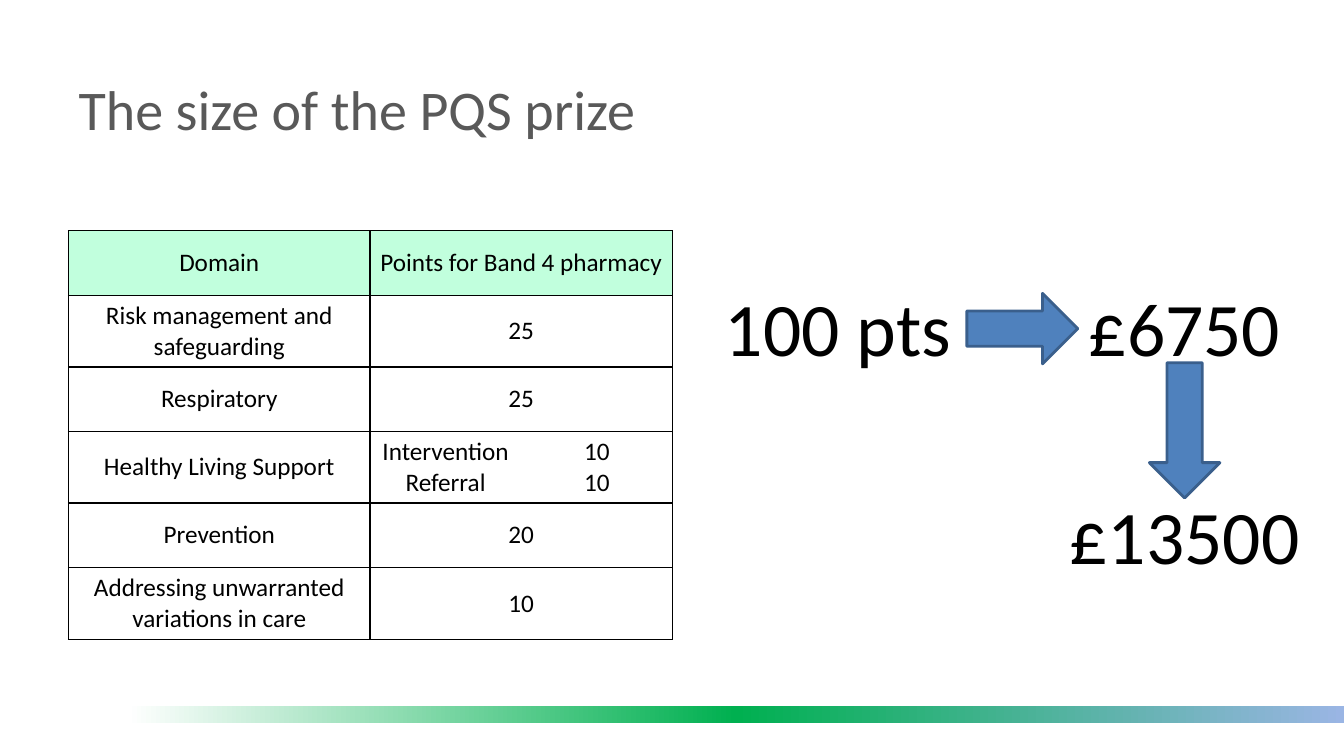
from copy import deepcopy
from dataclasses import dataclass

from lxml import etree
from pptx import Presentation
from pptx import util as u
from pptx.dml.color import RGBColor
from pptx.enum import shapes, text
from pptx.oxml import ns

TITLE = "The size of the PQS prize"
# Each row: domain, then one merged points cell or two separate ones.
ROWS = [
    ("Domain", "Points for Band 4 pharmacy"),
    ("Risk management and safeguarding", "25"),
    ("Respiratory", "25"),
    ("Healthy Living Support", "Intervention\nReferral", "10\n10"),
    ("Prevention", "20"),
    ("Addressing unwarranted variations in care", "10"),
]
AMOUNTS = [  # text, left, top, alignment
    ("100 pts", 709, 274, text.PP_ALIGN.LEFT),
    ("£6750", 1043, 274, text.PP_ALIGN.CENTER),
    ("£13500", 1043, 480, text.PP_ALIGN.CENTER),
]
AMOUNT_SIZE = (264, 101)
ARROWS = [  # left, top, width, height, rotation
    (1140, 360, 70, 134, 0),
    (979, 271, 70, 110, 270),
]
TITLE_BOX = (68, 29, 1079, 156)
STRIPE_BOX = (126, 700, 1207, 17)
TABLE_LEFT, TABLE_TOP = 68, 229
COLUMN_WIDTHS = (299, 150, 150)
ROW_HEIGHT = 64


@dataclass(frozen=True)
class Theme:
    font: str = "Calibri"
    title_size: int = 40
    table_size: int = 18
    amount_size: int = 54
    title: str = "595959"
    ink: str = "000000"
    header: str = "C1FFDD"
    arrow: str = "4F81BD"
    arrow_line: str = "3A5F8C"
    stripe: tuple = ("FFFFFF", "00B050", "9AB5E4")


THEME = Theme()


def px(length):
    """Convert px, 100 to the inch, to EMU."""
    return u.Emu(length * 9144)


def box(*lengths):
    return [px(length) for length in lengths]


def rgb(value):
    return RGBColor.from_string(value)


def write(text_frame, content, size, color, alignment):
    text_frame.text = content
    text_frame.word_wrap = True
    for paragraph in text_frame.paragraphs:
        paragraph.alignment = alignment
        for run in paragraph.runs:
            run.font.name = THEME.font
            run.font.size = u.Pt(size)
            run.font.color.rgb = rgb(color)


def add_stripe(slide):
    stripe = slide.shapes.add_shape(shapes.MSO_SHAPE.RECTANGLE, *box(*STRIPE_BOX))
    stripe.shadow.inherit = False
    stripe.line.fill.background()
    stripe.fill.gradient()
    stripe.fill.gradient_angle = 0
    stop_list = stripe.element.spPr.find(".//" + ns.qn("a:gsLst"))
    stop_list.append(deepcopy(stop_list[-1]))
    for index, (stop, color) in enumerate(zip(stripe.fill.gradient_stops, THEME.stripe)):
        stop.position = index / 2
        stop.color.rgb = rgb(color)


def set_borders(cell, sides):
    """Draw the named sides (L, R, T, B) and clear the others."""
    properties = cell._tc.get_or_add_tcPr()
    for side in "LRTB":
        line = etree.SubElement(properties, ns.qn("a:ln" + side), w=str(u.Pt(1)))
        if side in sides:
            fill = etree.SubElement(line, ns.qn("a:solidFill"))
            etree.SubElement(fill, ns.qn("a:srgbClr"), val=THEME.ink)
        else:
            etree.SubElement(line, ns.qn("a:noFill"))


def add_points_table(slide):
    size = (sum(COLUMN_WIDTHS), ROW_HEIGHT * len(ROWS))
    frame = slide.shapes.add_table(
        len(ROWS), len(COLUMN_WIDTHS), *box(TABLE_LEFT, TABLE_TOP, *size))
    table = frame.table
    table.first_row = table.horz_banding = False
    for column, width in zip(table.columns, COLUMN_WIDTHS):
        column.width = px(width)
    for row_index, values in enumerate(ROWS):
        table.rows[row_index].height = px(ROW_HEIGHT)
        if len(values) == 2:
            table.cell(row_index, 1).merge(table.cell(row_index, 2))
            borders = ("LRTB", "LRTB", "LRTB")
        else:
            borders = ("LRTB", "LTB", "RTB")
        for column_index, sides in enumerate(borders):
            cell = table.cell(row_index, column_index)
            set_borders(cell, sides)
            if row_index == 0:
                cell.fill.solid()
                cell.fill.fore_color.rgb = rgb(THEME.header)
            else:
                cell.fill.background()
            cell.vertical_anchor = text.MSO_ANCHOR.MIDDLE
            if column_index < len(values):
                write(cell.text_frame, values[column_index], THEME.table_size,
                      THEME.ink, text.PP_ALIGN.CENTER)


def add_arrow(slide, left, top, width, height, rotation):
    arrow = slide.shapes.add_shape(
        shapes.MSO_SHAPE.DOWN_ARROW, *box(left, top, width, height))
    arrow.rotation = rotation
    arrow.shadow.inherit = False
    arrow.fill.solid()
    arrow.fill.fore_color.rgb = rgb(THEME.arrow)
    arrow.line.color.rgb = rgb(THEME.arrow_line)
    arrow.line.width = u.Pt(2)


def main():
    presentation = Presentation()
    presentation.slide_width, presentation.slide_height = box(1333, 750)
    slide = presentation.slides.add_slide(presentation.slide_layouts[5])
    add_stripe(slide)

    title = slide.shapes.title
    title.left, title.top, title.width, title.height = box(*TITLE_BOX)
    write(title.text_frame, TITLE, THEME.title_size, THEME.title, text.PP_ALIGN.LEFT)
    title.text_frame.vertical_anchor = text.MSO_ANCHOR.MIDDLE

    add_points_table(slide)
    for content, left, top, alignment in AMOUNTS:
        amount = slide.shapes.add_textbox(*box(left, top, *AMOUNT_SIZE))
        write(amount.text_frame, content, THEME.amount_size, THEME.ink, alignment)
    for arrow in ARROWS:
        add_arrow(slide, *arrow)

    presentation.save("out.pptx")


if __name__ == "__main__":
    main()
